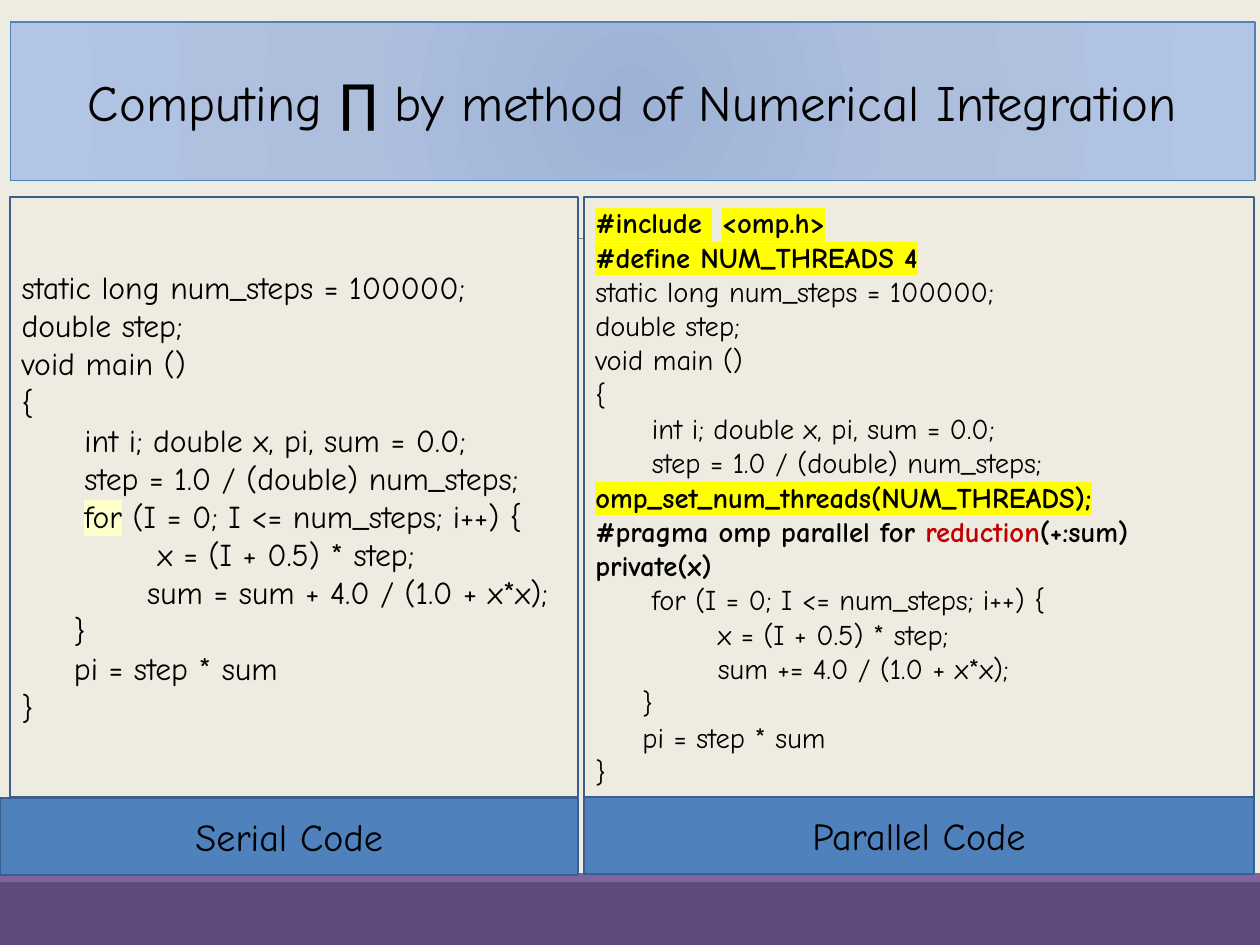
from dataclasses import dataclass

from lxml.etree import SubElement
from pptx import Presentation
from pptx.dml.color import RGBColor as RGB
from pptx.enum.shapes import MSO_CONNECTOR as CONNECTOR, MSO_SHAPE as SHAPE
from pptx.enum.text import MSO_ANCHOR as ANCHOR, PP_ALIGN as ALIGN
from pptx.oxml.ns import qn
from pptx.util import Inches, Pt


@dataclass(frozen=True)
class Theme:
    font: str = "Comic Neue"
    paper: str = "EEECE1"
    ink: str = "000000"
    accent: str = "4F81BD"
    border: str = "3A5F8C"
    rule: str = "808080"
    footer: str = "604A7B"
    footer_edge: str = "8064A2"
    red: str = "C00000"
    yellow: str = "FFFF00"
    cream: str = "FFFFCC"
    gradient: tuple = ((0, "9DB2D6"), (45, "AEBFDE"), (100, "B3C5E5"))
    title_size: int = 32
    label_size: int = 24
    serial_size: int = 20
    parallel_size: int = 18
    space_ratio: float = 0.33


THEME = Theme()
CM_PER_INCH = 2.54
PAGE_W, PAGE_H = 28 / CM_PER_INCH, 21 / CM_PER_INCH
BOLD = {"bold": True}
MARKED = {"bold": True, "highlight": THEME.yellow}

DECLARATIONS = [
    (0, [("static long num_steps = 100000;", {})]),
    (0, [("double step;", {})]),
    (0, [("void main ()", {})]),
    (0, [("{", {})]),
    (6, [("int i; double x, pi, sum = 0.0;", {})]),
    (6, [("step = 1.0 / (double) num_steps;", {})]),
]
MIDPOINT = (13, [("x = (I + 0.5) * step;", {})])
CLOSING = [
    (5, [("}", {})]),
    (5, [("pi = step * sum", {})]),
    (0, [("}", {})]),
]
SERIAL_CODE = [
    *DECLARATIONS,
    (6, [("for", {"highlight": THEME.cream}),
         (" (I = 0; I <= num_steps; i++) {", {})]),
    MIDPOINT,
    (12, [("sum = sum + 4.0 / (1.0 + x*x);", {})]),
    *CLOSING,
]
PARALLEL_CODE = [
    (0, [("#include", MARKED),
         (" ", {**MARKED, "spacing": 6}),
         ("<omp.h>", MARKED)]),
    (0, [("#define NUM_THREADS 4", MARKED)]),
    *DECLARATIONS,
    (0, [("omp_set_num_threads(NUM_THREADS);", MARKED)]),
    (0, [("#pragma omp parallel for ", BOLD),
         ("reduction", {"bold": True, "color": THEME.red}),
         ("(+:sum) private(x)", BOLD)]),
    (6, [("for (I = 0; I <= num_steps; i++) {", {})]),
    MIDPOINT,
    (13, [("sum += 4.0 / (1.0 + x*x);", {})]),
    *CLOSING,
]


def add_box(s, box, fill=None, line=None, width=1.25):
    sp = s.shapes.add_shape(SHAPE.RECTANGLE, *map(Inches, box))
    sp.shadow.inherit = False
    if fill:
        sp.fill.solid()
        sp.fill.fore_color.rgb = RGB.from_string(fill)
    if line:
        sp.line.color.rgb = RGB.from_string(line)
        sp.line.width = Pt(width)
    else:
        sp.line.fill.background()
    sp.text_frame.word_wrap = True
    sp.text_frame.vertical_anchor = ANCHOR.MIDDLE
    return sp


def add_text(p, text, size, color=THEME.ink, bold=False, highlight=None, spacing=0):
    r = p.add_run()
    r.text = text
    r.font.size = Pt(size)
    r.font.bold = bold
    r.font.color.rgb = RGB.from_string(color)
    if spacing:
        r.font._element.set("spc", str(spacing * 100))
    if highlight:
        mark = SubElement(r.font._element, qn("a:highlight"))
        SubElement(mark, qn("a:srgbClr"), val=highlight)
    r.font.name = THEME.font


def add_heading(sp, text, size):
    p = sp.text_frame.paragraphs[0]
    p.alignment = ALIGN.CENTER
    add_text(p, text, size)


def fill_radial(sp, stops):
    sp.fill.gradient()
    grad = sp.fill._xPr.find(qn("a:gradFill"))
    for child in list(grad):
        grad.remove(child)
    stop_list = SubElement(grad, qn("a:gsLst"))
    for percent, color in stops:
        stop = SubElement(stop_list, qn("a:gs"), pos=str(percent * 1000))
        SubElement(stop, qn("a:srgbClr"), val=color)
    circle = SubElement(grad, qn("a:path"), path="circle")
    SubElement(circle, qn("a:fillToRect"), {side: "100000" for side in "ltrb"})


def draw_backdrop(s, box):
    x, y, w, h = box
    s.background.fill.solid()
    s.background.fill.fore_color.rgb = RGB.from_string(THEME.paper)
    add_box(s, (x, y + h - 0.55, w, 0.55), THEME.footer)
    add_box(s, (x, y + h - 0.63, w, 0.08), THEME.footer_edge)
    rule = s.shapes.add_connector(
        CONNECTOR.STRAIGHT, *map(Inches, (x + 1.08, y + 2.09, x + 10.09, y + 2.09)))
    rule.line.color.rgb = RGB.from_string(THEME.rule)
    rule.line.width = Pt(0.5)
    SubElement(rule._element.spPr, qn("a:effectLst"))


def draw_title(s, box, text):
    sp = add_box(s, box, line=THEME.accent, width=1)
    fill_radial(sp, THEME.gradient)
    add_heading(sp, text, THEME.title_size)


def draw_code_panel(s, box, code, size, label, label_overhang=0, label_gap=0):
    x, y, w, h = box
    tf = add_box(s, box, THEME.paper, THEME.border).text_frame
    for i, (column, runs) in enumerate(code):
        p = tf.add_paragraph() if i else tf.paragraphs[0]
        p.alignment = ALIGN.LEFT
        if column:
            indent = Pt(column * THEME.space_ratio * size)
            p._p.get_or_add_pPr().set("marL", str(indent))
        for text, style in runs:
            add_text(p, text, size, **style)
    label_box = (x - label_overhang, y + h + label_gap, w + label_overhang, 0.68)
    add_heading(add_box(s, label_box, THEME.accent, THEME.border), label, THEME.label_size)


def main():
    prs = Presentation()
    prs.slide_width, prs.slide_height = Inches(PAGE_W), Inches(PAGE_H)
    s = prs.slides.add_slide(prs.slide_layouts[6])
    draw_backdrop(s, (0, 0, PAGE_W, PAGE_H))
    draw_title(s, (0.09, 0.19, 10.89, 1.39),
               "Computing ∏ by method of Numerical Integration")
    draw_code_panel(s, (0.09, 1.72, 4.97, 5.25), SERIAL_CODE, THEME.serial_size,
                    "Serial Code", label_overhang=0.09, label_gap=0.01)
    draw_code_panel(s, (5.11, 1.72, 5.86, 5.25), PARALLEL_CODE, THEME.parallel_size,
                    "Parallel Code")
    prs.save("out.pptx")


if __name__ == "__main__":
    main()
